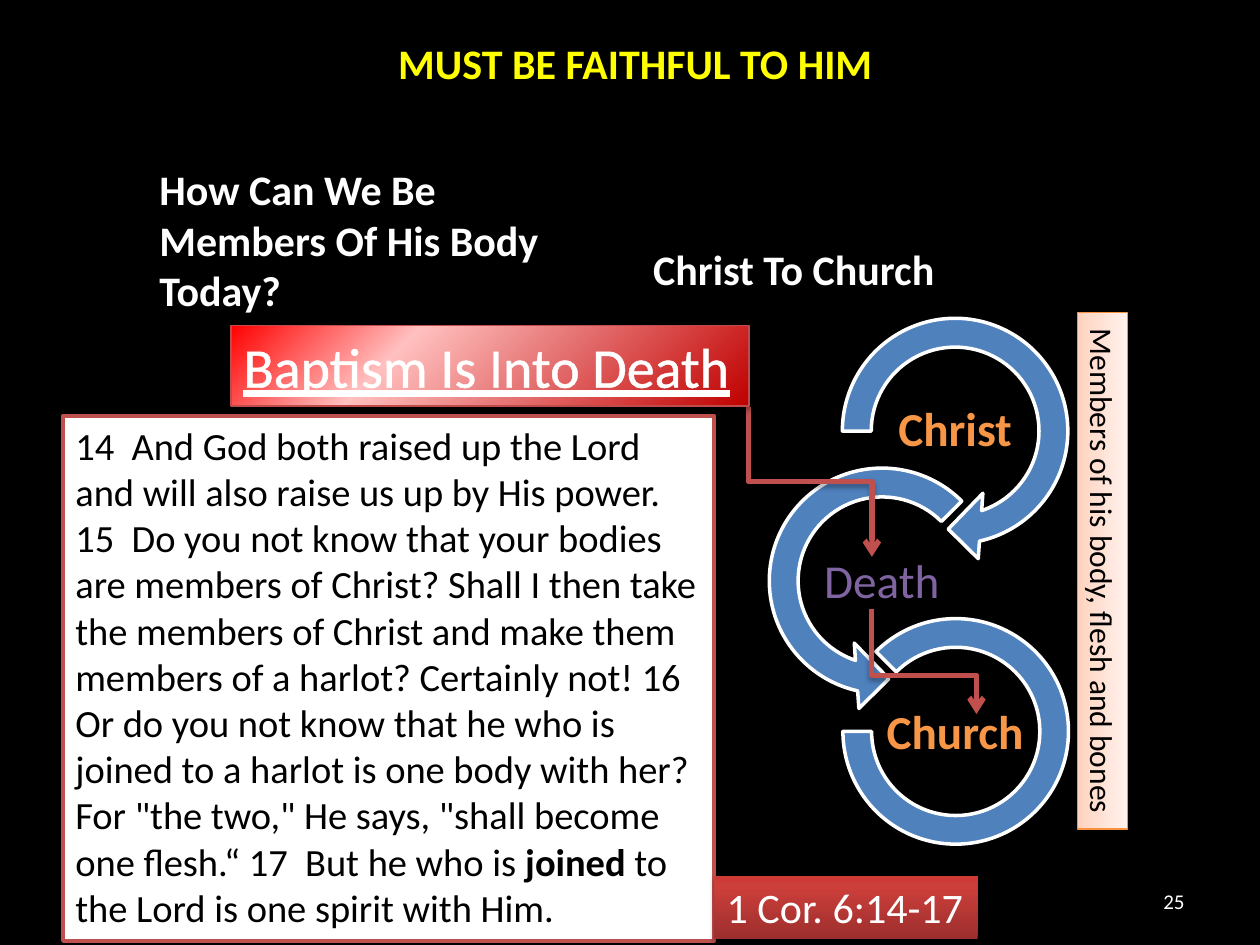
"""Build the slide on baptism and membership in the body of Christ."""
from lxml import etree
from pptx import Presentation
from pptx.dml import color
from pptx.enum import shapes, text
from pptx.oxml import ns
from pptx.util import Pt

SHAPE = shapes.MSO_SHAPE
ANCHOR = text.MSO_ANCHOR
ALIGN = text.PP_ALIGN
RED = "C0504D"
VERSE = [
    ("14  And God both raised up the Lord and will also raise us up by His power. "
     "15  Do you not know that your bodies are members of Christ? Shall I then take "
     "the members of Christ and make them members of a harlot? Certainly not! "
     "16  Or do you not know that he who is joined to a harlot is one body with her? "
     'For "the two," He says, "shall become one flesh.“ 17  But he who is ', False),
    ("joined", True),
    (" to the Lord is one spirit with Him.", False),
]


def rgb(value):
    """Return the colour for a hex string."""
    return color.RGBColor.from_string(value)


def child(parent, tag, **attributes):
    """Append a DrawingML element and return it."""
    element = etree.SubElement(parent, ns.qn("a:" + tag))
    for name, value in attributes.items():
        element.set(name, str(value))
    return element


def add_color(parent, value, alpha=None):
    """Append a hex colour, with optional opacity in percent."""
    element = child(parent, "srgbClr", val=value)
    if alpha is not None:
        child(element, "alpha", val=alpha * 1000)


def write(shape, content, size=24, fill="FFFFFF", bold=False, underline=False,
          outline=None, align=ALIGN.LEFT, anchor=ANCHOR.TOP, wrap=True,
          inset=None, spacing=None):
    """Write one paragraph, given as a string or as (text, bold) pairs."""
    frame = shape.text_frame
    frame.word_wrap = wrap
    frame.auto_size = text.MSO_AUTO_SIZE.NONE
    frame.vertical_anchor = anchor
    if inset is not None:
        frame.margin_left = frame.margin_right = Pt(inset)
        frame.margin_top = frame.margin_bottom = Pt(inset)
    paragraph = frame.paragraphs[0]
    paragraph.alignment = align
    if spacing:
        paragraph.line_spacing = spacing
    for words, strong in [(content, bold)] if isinstance(content, str) else content:
        run = paragraph.add_run()
        run.text = words
        font = run.font
        font.name, font.size, font.bold = "Calibri", Pt(size), strong
        font.underline = underline
        font.color.rgb = rgb(fill)
        if outline:
            properties = font._element
            line = child(properties, "ln", w=Pt(outline))
            add_color(child(line, "solidFill"), fill)
            properties.insert(0, line)


def place(shape, left, top, width, height):
    """Move and size a shape, in points."""
    shape.left, shape.top = Pt(left), Pt(top)
    shape.width, shape.height = Pt(width), Pt(height)


def add_text(slide, box, content, **style):
    """Add a text box."""
    shape = slide.shapes.add_textbox(*map(Pt, box))
    write(shape, content, **style)


def add_shadow(properties, opacity, blur, distance):
    """Give shape properties a shadow that falls straight down."""
    effects = properties.find(ns.qn("a:effectLst"))
    if effects is None:
        effects = child(properties, "effectLst")
    shadow = child(effects, "outerShdw", blurRad=Pt(blur), dist=Pt(distance),
                   dir=5400000, rotWithShape=0)
    add_color(shadow, "000000", opacity)


def set_gradient(shape, stops, corner=False):
    """Fill upwards, or outwards from the bottom right corner."""
    shape.fill.solid()
    properties = shape._element.spPr
    old = properties.find(ns.qn("a:solidFill"))
    gradient = child(properties, "gradFill", rotWithShape=1)
    stop_list = child(gradient, "gsLst")
    for position, value in stops:
        add_color(child(stop_list, "gs", pos=position * 1000), value)
    if corner:
        child(child(gradient, "path", path="circle"), "fillToRect", l=100000, t=100000)
    else:
        child(gradient, "lin", ang=16200000, scaled=0)
    properties.replace(old, gradient)


def add_shape(slide, kind, box, fill=None, line=None, width=0.75, adjustments=()):
    """Add a preset shape with a plain fill and line."""
    shape = slide.shapes.add_shape(kind, *map(Pt, box))
    shape.shadow.inherit = False
    for index, value in enumerate(adjustments):
        shape.adjustments[index] = value
    if fill:
        shape.fill.solid()
        shape.fill.fore_color.rgb = rgb(fill)
    if line:
        shape.line.color.rgb = rgb(line)
        shape.line.width = Pt(width)
    else:
        shape.line.fill.background()
    return shape


def add_banner(slide, box, stops, shadow, line=None, corner=False):
    """Add a gradient rectangle with a shadow."""
    shape = add_shape(slide, SHAPE.RECTANGLE, box, line=line)
    set_gradient(shape, stops, corner)
    add_shadow(shape._element.spPr, *shadow)
    return shape


def add_elbow(slide, start, end, bend):
    """Add an elbow arrow that leaves and arrives vertically."""
    (x1, y1), (x2, y2) = start, end
    middle_x, middle_y = (x1 + x2) / 2, (y1 + y2) / 2
    half_width, half_height = (y2 - y1) / 2, (x2 - x1) / 2
    connector = slide.shapes.add_connector(
        shapes.MSO_CONNECTOR.ELBOW,
        Pt(middle_x + half_width), Pt(middle_y - half_height),
        Pt(middle_x - half_width), Pt(middle_y + half_height))
    connector.line.color.rgb = rgb(RED)
    connector.line.width = Pt(3)
    properties = connector._element.spPr
    properties.find(ns.qn("a:xfrm")).set("rot", "16200000")
    geometry = properties.find(ns.qn("a:prstGeom"))
    guides = geometry.find(ns.qn("a:avLst"))
    if guides is None:
        guides = child(geometry, "avLst")
    child(guides, "gd", name="adj1", fmla=f"val {round(bend * 100000)}")
    child(properties.find(ns.qn("a:ln")), "tailEnd", type="arrow")
    add_shadow(properties, 35, 3.1, 1.8)


def add_cycle(slide):
    """Add the chain of three rings with their labels."""
    rings = [
        (SHAPE.CIRCULAR_ARROW, (470.9, 171.4, 149.8, 149.8),
         (0.11, 11.42, 45, 108, 0.125), "Christ", 504, "F79646", True),
        (SHAPE.LEFT_CIRCULAR_ARROW, (429.1, 257, 149.8, 149.8),
         (0.11, 11.42, 63, 189, 0.125), "Death", 462.2, "8064A2", False),
        (SHAPE.BLOCK_ARC, (481.7, 353.5, 128.9, 128.9),
         (135, 108, 0.127), "Church", 504, "F79646", True),
    ]
    for row, (kind, box, adjustments, label, left, fill, bold) in enumerate(rings):
        add_shape(slide, kind, box, "4F81BD", "FFFFFF", 2, adjustments)
        add_text(slide, (left, 225.4 + 86.7 * row, 83.5, 41.8), label, size=27,
                 fill=fill, bold=bold, align=ALIGN.CENTER, anchor=ANCHOR.MIDDLE,
                 inset=1.4, spacing=0.9)


def add_headings(slide):
    """Fill the title and body placeholders and remove the others."""
    for placeholder in list(slide.placeholders):
        if placeholder.placeholder_format.idx > 1:
            placeholder._element.getparent().remove(placeholder._element)
    title, body = slide.shapes.title, slide.placeholders[1]
    place(title, 18, 18, 690, 36)
    write(title, "MUST BE FAITHFUL TO HIM", fill="FFFF00", bold=True, align=ALIGN.CENTER)
    place(body, 366, 121, 318, 50.4)
    write(body, "Christ To Church", bold=True, anchor=ANCHOR.BOTTOM)


def main():
    """Build and save the slide."""
    presentation = Presentation()
    presentation.slide_width, presentation.slide_height = Pt(720), Pt(540)
    slide = presentation.slides.add_slide(presentation.slide_layouts[4])
    slide.background.fill.solid()
    slide.background.fill.fore_color.rgb = rgb("000000")
    add_headings(slide)
    add_cycle(slide)

    members = add_banner(slide, (482.4, 311.8, 295.2, 28.8),
                         [(0, "FFD2BD"), (35, "FFDED0"), (100, "FFF2ED")],
                         (38, 3.1, 1.6), "F69240")
    members.rotation = 90
    write(members, "Members of his body, flesh and bones", size=18, fill="000000",
          align=ALIGN.CENTER)
    add_text(slide, (84, 90, 246, 94.3), "How Can We Be Members Of His Body Today?", bold=True)
    add_elbow(slide, (427.7, 232.5), (498.2, 318.2), 0.5)
    add_elbow(slide, (498.2, 348), (558, 408), 0.63)

    verse = add_shape(slide, SHAPE.RECTANGLE, (36, 237.6, 372.2, 300.2), "FFFFFF", RED, 2)
    write(verse, VERSE, size=22, fill="000000")
    reference = add_banner(slide, (408.2, 500.4, 150.5, 36),
                           [(0, "9C2F2D"), (80, "CB3E3A"), (100, "CE3B37")], (35, 3.1, 1.8))
    write(reference, "1 Cor. 6:14-17", wrap=False)
    baptism = add_banner(slide, (132, 186, 296, 46),
                         [(0, "C00000"), (68, "FFC0BF"), (100, "FF0000")],
                         (38, 3.1, 1.6), "BF4C48", corner=True)
    write(baptism, "Baptism Is Into Death", size=32, underline=True, outline=1.45, wrap=False)
    add_text(slide, (516, 500.4, 168, 28.8), "25", size=12, align=ALIGN.RIGHT,
             anchor=ANCHOR.MIDDLE)
    presentation.save("out.pptx")


if __name__ == "__main__":
    main()
